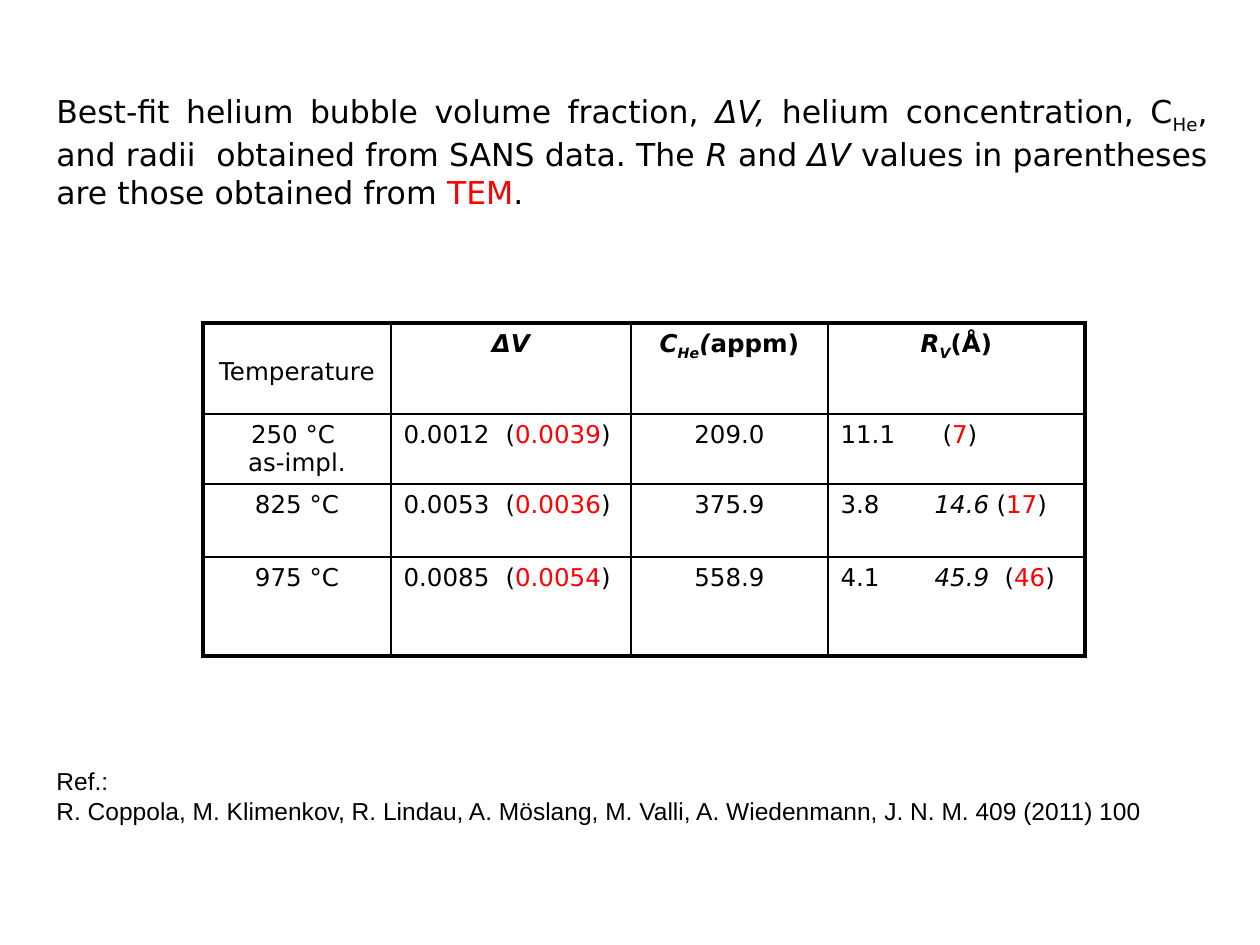
from dataclasses import dataclass

from lxml.etree import SubElement
from pptx import Presentation
from pptx.dml.color import RGBColor
from pptx.enum.text import MSO_ANCHOR, PP_ALIGN
from pptx.oxml import parse_xml
from pptx.oxml.ns import nsdecls, qn
from pptx.util import Emu, Pt

DPI = 126
COLORS = {"ink": "000000", "tem": "FF0000"}
SANS = "DejaVu Sans"
THIN, THICK = 1, 2.25


@dataclass(frozen=True)
class Bit:
    text: str
    bold: bool = False
    slant: bool = False
    sub: bool = False
    color: str = "ink"


@dataclass(frozen=True)
class Cell:
    lines: tuple
    align: PP_ALIGN = PP_ALIGN.CENTER
    tabs: tuple = ()


@dataclass(frozen=True)
class Block:
    top: int
    high: int
    lines: tuple
    size: int
    font: str


def px(count: int) -> Emu:
    return Emu(round(count * 914400 / DPI))


def write(frame, lines: tuple, align: PP_ALIGN, size: int, font: str,
          tabs: tuple = ()) -> None:
    """Fill a text frame, one paragraph a line and one run a bit."""
    for at, bits in enumerate(lines):
        para = frame.add_paragraph() if at else frame.paragraphs[0]
        para.alignment = align
        if tabs:
            stops = SubElement(para._p.get_or_add_pPr(), qn("a:tabLst"))
            for stop in tabs:
                SubElement(stops, qn("a:tab"), pos=str(px(stop)), algn="l")
        for bit in bits:
            run = para.add_run()
            run.text = bit.text
            run.font.name = font
            run.font.size = Pt(size)
            run.font.bold = bit.bold
            run.font.italic = bit.slant
            run.font.color.rgb = RGBColor.from_string(COLORS[bit.color])
            if bit.sub:
                run._r.get_or_add_rPr().set("baseline", "-25000")


def edge(cell, widths: dict) -> None:
    """Draw the four borders of a table cell."""
    props = cell._tc.get_or_add_tcPr()
    for at, (side, width) in enumerate(widths.items()):
        props.insert(at, parse_xml(
            f'<a:ln{side} {nsdecls("a")} w="{Pt(width)}"><a:solidFill>'
            f'<a:srgbClr val="{COLORS["ink"]}"/></a:solidFill></a:ln{side}>'))


def plain(*texts: str) -> Cell:
    return Cell(tuple((Bit(text),) for text in texts))


def head(*bits: Bit) -> Cell:
    return Cell((bits,))


def pair(fit: str, tem: str) -> Cell:
    """A fitted value, then the TEM value in parentheses."""
    return Cell(((Bit(f"{fit}\t("), Bit(tem, color="tem"), Bit(")")),),
                PP_ALIGN.LEFT, (102,))


def trio(small: str, large: str, tem: str, tab: int) -> Cell:
    """Two fitted radii, then the TEM radius in parentheses."""
    bits = (Bit(f"{small}\t"), Bit(f"{large}\t", slant=True), Bit("("),
            Bit(tem, color="tem"), Bit(")"))
    return Cell((bits,), PP_ALIGN.LEFT, (94, tab))


# Text blocks
BLOCKS = (
    Block(86, 127, ((
        Bit("Best-fit helium bubble volume fraction, "),
        Bit("ΔV, ", slant=True),
        Bit("helium concentration, C"),
        Bit("He", sub=True),
        Bit(", and radii  obtained from SANS data. The "),
        Bit("R ", slant=True),
        Bit("and "),
        Bit("ΔV ", slant=True),
        Bit("values in parentheses are those obtained from "),
        Bit("TEM", color="tem"),
        Bit(". ")),), 18, SANS),
    Block(760, 72, (
        (Bit("Ref.: "),),
        (Bit("R. Coppola, M. Klimenkov, R. Lindau, A. Möslang, M. Valli, "
             "A. Wiedenmann, J. N. M. 409 (2011) 100"),)), 14, "Arial"),
)

# Table content
COLS = (188, 240, 197, 257)
ROWS = (91, 70, 73, 99)
GRID = (
    (plain("Temperature"),
     head(Bit("ΔV", True, True)),
     head(Bit("C", True, True), Bit("He", True, True, True),
          Bit("(", True, True), Bit("appm)", True)),
     head(Bit("R", True, True), Bit("V", True, True, True),
          Bit("(Å)", True))),
    (plain("250 °C ", "as-impl."), pair("0.0012", "0.0039"),
     plain("209.0"), pair("11.1", "7")),
    (plain("825 °C"), pair("0.0053", "0.0036"),
     plain("375.9"), trio("3.8", "14.6", "17", 156)),
    (plain("975 °C"), pair("0.0085", "0.0054"),
     plain("558.9"), trio("4.1", "45.9", "46", 164)),
)


def draw_block(slide, block: Block) -> None:
    box = slide.shapes.add_textbox(px(44), px(block.top), px(1176),
                                   px(block.high))
    box.text_frame.word_wrap = True
    write(box.text_frame, block.lines, PP_ALIGN.JUSTIFY, block.size,
          block.font)


def draw_table(slide) -> None:
    table = slide.shapes.add_table(len(ROWS), len(COLS), px(203), px(323),
                                   px(sum(COLS)), px(sum(ROWS))).table
    table.first_row = table.horz_banding = False
    for col, wide in zip(table.columns, COLS):
        col.width = px(wide)
    for row, high in zip(table.rows, ROWS):
        row.height = px(high)
    for y, row in enumerate(GRID):
        for x, item in enumerate(row):
            cell = table.cell(y, x)
            cell.fill.background()
            write(cell.text_frame, item.lines, item.align, 14, SANS,
                  item.tabs)
            edge(cell, {
                "L": THICK if x == 0 else THIN,
                "R": THICK if x == len(COLS) - 1 else THIN,
                "T": THICK if y == 0 else THIN,
                "B": THICK if y == len(ROWS) - 1 else THIN})
    # The first heading sits a little below the middle
    first = table.cell(0, 0)
    first.vertical_anchor = MSO_ANCHOR.MIDDLE
    first.margin_top = px(13)


def main() -> None:
    deck = Presentation()
    deck.slide_width, deck.slide_height = px(1260), px(945)
    slide = deck.slides.add_slide(deck.slide_layouts[6])
    draw_table(slide)
    for block in BLOCKS:
        draw_block(slide, block)
    deck.save("out.pptx")


if __name__ == "__main__":
    main()
